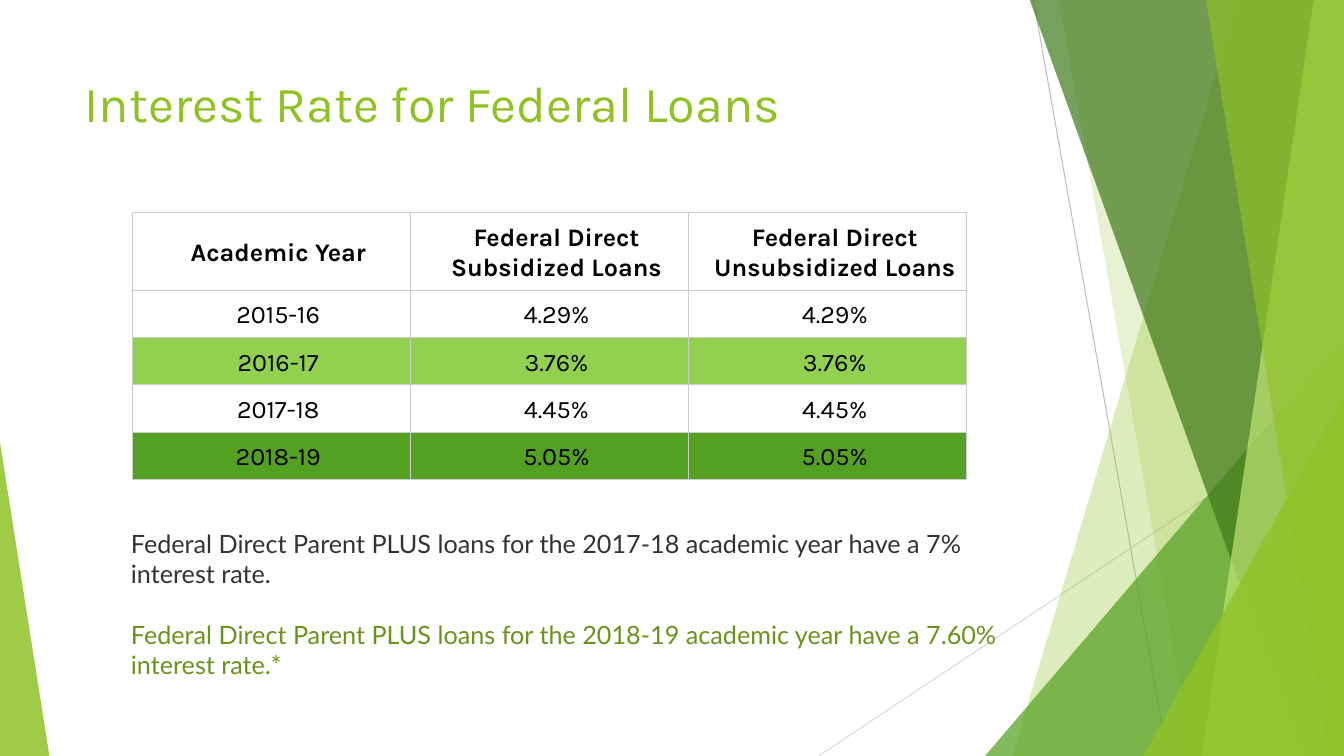
"""Builds the slide on interest rates for federal loans."""
import lxml.etree
import pptx
import pptx.dml.color
import pptx.enum.shapes
import pptx.enum.text
import pptx.oxml.ns
import pptx.util

Inches = pptx.util.Inches
Pt = pptx.util.Pt
RGBColor = pptx.dml.color.RGBColor
qn = pptx.oxml.ns.qn

WHITE = RGBColor(0xFF, 0xFF, 0xFF)
BLACK = RGBColor(0x00, 0x00, 0x00)
CHARCOAL = RGBColor(0x33, 0x33, 0x33)
GREY = RGBColor(0xBF, 0xBF, 0xBF)
PALE_GREY = RGBColor(0xD9, 0xD9, 0xD9)
BORDER_GREY = RGBColor(0xCC, 0xCC, 0xCC)
LIME = RGBColor(0x90, 0xC2, 0x26)
PALE_LIME = RGBColor(0xC0, 0xE4, 0x74)
GREEN = RGBColor(0x54, 0xA0, 0x21)
FOREST = RGBColor(0x3F, 0x78, 0x19)
ROW_GREEN = RGBColor(0x92, 0xD0, 0x50)
OLIVE = RGBColor(0x6C, 0x92, 0x1D)

WIDTH, HEIGHT = 13.33, 7.5
HEADINGS = ("Academic Year", "Federal Direct Subsidized Loans",
            "Federal Direct Unsubsidized Loans")
RATES = (
    ("2015-16", "4.29%", WHITE),
    ("2016-17", "3.76%", ROW_GREEN),
    ("2017-18", "4.45%", WHITE),
    ("2018-19", "5.05%", GREEN),
)
NOTES = (
    ("Federal Direct Parent PLUS loans for the 2017-18 academic year have a 7% "
     "interest rate.", CHARCOAL),
    ("Federal Direct Parent PLUS loans for the 2018-19 academic year have a 7.60% "
     "interest rate.*", OLIVE),
)


def format_runs(paragraph, font_name, size, color, bold=False):
    """Give every run of a paragraph the same font."""
    for run in paragraph.runs:
        run.font.name = font_name
        run.font.size = Pt(size)
        run.font.bold = bold
        run.font.color.rgb = color


def paint(facet, color, opacity):
    """Fill a facet with a translucent colour, without line or shadow."""
    facet.shadow.inherit = False
    facet.line.fill.background()
    facet.fill.solid()
    facet.fill.fore_color.rgb = color
    tint = facet.fill._xPr.find(qn("a:solidFill"))[0]
    lxml.etree.SubElement(tint, qn("a:alpha"), val=str(opacity * 1000))


def add_ray(slide, start, end, color):
    """Draw a thin straight line."""
    ray = slide.shapes.add_connector(
        pptx.enum.shapes.MSO_CONNECTOR.STRAIGHT,
        *(Inches(value) for value in start + end))
    ray.line.color.rgb = color
    ray.line.width = Pt(0.75)
    lxml.etree.SubElement(ray._element.spPr, qn("a:effectLst"))


def add_band(slide, top_x, bottom_x, color, opacity):
    """Draw a full-height band from a slanted left edge to the right edge."""
    top = Inches(-0.01)
    right, bottom = Inches(WIDTH), Inches(HEIGHT)
    outline = slide.shapes.build_freeform(Inches(top_x), top)
    outline.add_line_segments(
        [(right, top), (right, bottom), (Inches(bottom_x), bottom)], close=True)
    paint(outline.convert_to_shape(), color, opacity)


def add_corner(slide, left, top, width, apex, color, opacity):
    """Draw a triangle that stands on the bottom edge."""
    corner = slide.shapes.add_shape(
        pptx.enum.shapes.MSO_SHAPE.ISOSCELES_TRIANGLE, Inches(left), Inches(top),
        Inches(width), Inches(HEIGHT - top))
    corner.adjustments[0] = apex
    paint(corner, color, opacity)


def add_backdrop(slide):
    """Draw the green facets on both sides."""
    add_ray(slide, (10.25, 0), (11.58, HEIGHT), GREY)
    add_ray(slide, (WIDTH, 4.03), (8.12, HEIGHT), PALE_GREY)
    add_band(slide, 12.28, 10.04, LIME, 30)
    add_band(slide, 10.5, 11.83, LIME, 20)
    add_corner(slide, 9.77, 3.33, 3.56, 1, GREEN, 72)
    add_band(slide, 10.21, 12.91, FOREST, 70)
    add_band(slide, 13.03, 11.92, PALE_LIME, 70)
    add_band(slide, 11.96, 13.18, LIME, 65)
    add_corner(slide, 11.34, 3.93, 1.99, 1, LIME, 80)
    add_corner(slide, 0, 4.39, 0.49, 0, LIME, 85)


def set_title(slide, wording):
    """Place and format the title."""
    title = slide.shapes.title
    title.left, title.top = Inches(0.74), Inches(0.67)
    title.width, title.height = Inches(9.4), Inches(1.44)
    title.text_frame.text = wording
    title.text_frame.vertical_anchor = pptx.enum.text.MSO_ANCHOR.TOP
    heading = title.text_frame.paragraphs[0]
    heading.alignment = pptx.enum.text.PP_ALIGN.LEFT
    format_runs(heading, "Karla", 36, LIME)


def add_borders(cell):
    """Draw a thin line on all four sides of a cell."""
    properties = cell._tc.get_or_add_tcPr()
    for side in ("a:lnL", "a:lnR", "a:lnT", "a:lnB"):
        edge = lxml.etree.SubElement(properties, qn(side), w=str(Pt(0.75)))
        fill = lxml.etree.SubElement(edge, qn("a:solidFill"))
        lxml.etree.SubElement(fill, qn("a:srgbClr"), val=str(BORDER_GREY))


def fill_cell(cell, wording, color, bold):
    """Write and format one table cell."""
    add_borders(cell)
    cell.fill.solid()
    cell.fill.fore_color.rgb = color
    cell.vertical_anchor = pptx.enum.text.MSO_ANCHOR.MIDDLE
    cell.margin_left, cell.margin_right = Inches(0.16), Inches(0.02)
    cell.margin_top, cell.margin_bottom = Inches(0.1), Inches(0.07)
    cell.text_frame.text = wording
    entry = cell.text_frame.paragraphs[0]
    entry.alignment = pptx.enum.text.PP_ALIGN.CENTER
    format_runs(entry, "Karla", 18, BLACK, bold)


def add_rates(slide):
    """Add the table of rates by academic year."""
    rows = [(HEADINGS, WHITE)]
    rows += [((year, rate, rate), color) for year, rate, color in RATES]
    rates = slide.shapes.add_table(
        len(rows), len(HEADINGS), Inches(1.31), Inches(2.11),
        Inches(8.28), Inches(2.65)).table
    for column in rates.columns:
        column.width = Inches(2.76)
    for row_index, (wordings, color) in enumerate(rows):
        is_heading = row_index == 0
        rates.rows[row_index].height = Inches(0.77 if is_heading else 0.47)
        for column_index, wording in enumerate(wordings):
            fill_cell(rates.cell(row_index, column_index), wording, color, is_heading)


def add_notes(slide):
    """Add the remarks on parent loans below the table."""
    frame = slide.shapes.add_textbox(
        Inches(1.2), Inches(5.19), Inches(8.94), Inches(1.6)).text_frame
    frame.word_wrap = True
    frame.text = "\n".join(wording for wording, color in NOTES)
    for remark, (wording, color) in zip(frame.paragraphs, NOTES):
        format_runs(remark, "Lato", 18, color)
    frame.paragraphs[-1].space_before = Pt(21.6)


def main():
    """Build and save the slide."""
    deck = pptx.Presentation()
    deck.slide_width, deck.slide_height = Inches(WIDTH), Inches(HEIGHT)
    slide = deck.slides.add_slide(deck.slide_layouts.get_by_name("Title Only"))
    add_backdrop(slide)
    set_title(slide, "Interest Rate for Federal Loans")
    add_rates(slide)
    add_notes(slide)
    deck.save("out.pptx")


if __name__ == "__main__":
    main()
